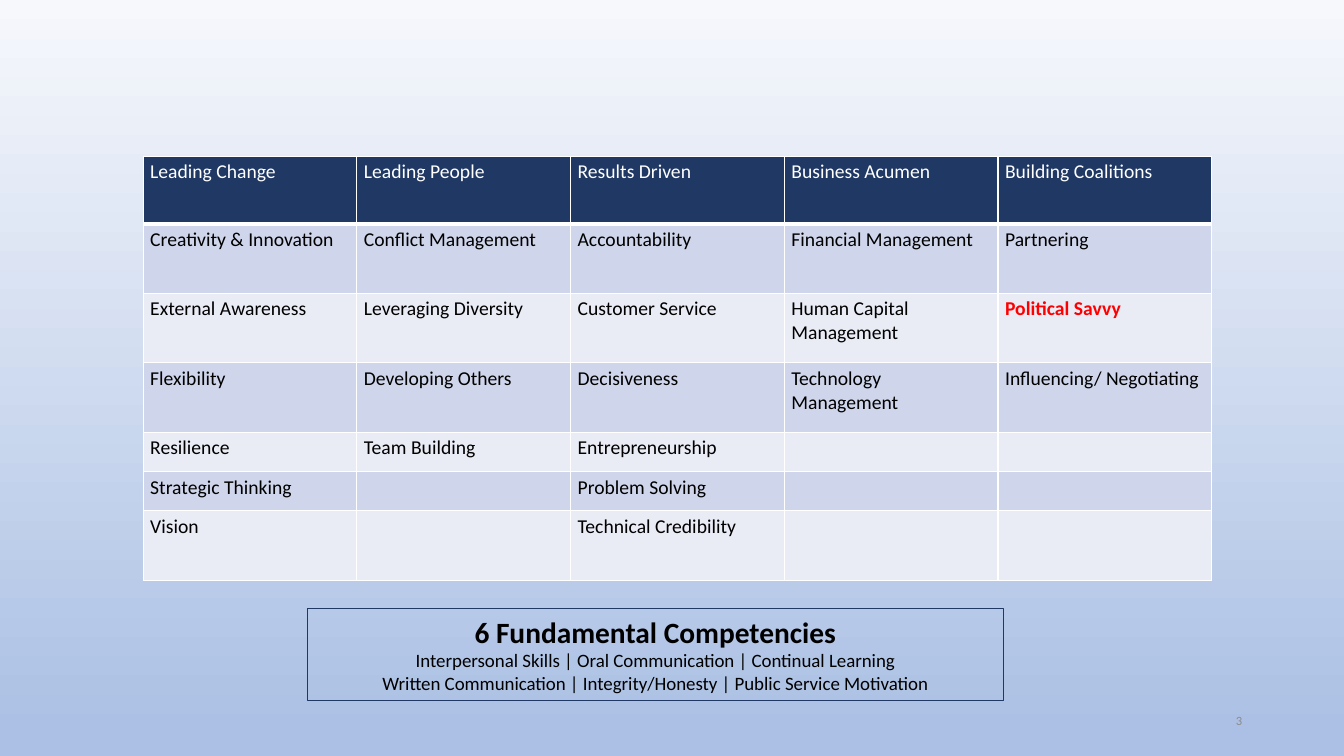
from lxml.etree import SubElement
from pptx import Presentation
from pptx.dml.color import RGBColor
from pptx.enum.shapes import MSO_SHAPE as Shape
from pptx.enum.text import MSO_ANCHOR as Anchor, PP_ALIGN as Align
from pptx.oxml.ns import qn
from pptx.util import Inches, Pt

NAVY = RGBColor(0x20, 0x38, 0x64)
WHITE = RGBColor(0xFF, 0xFF, 0xFF)
BLACK = RGBColor(0, 0, 0)
RED = RGBColor(0xFF, 0, 0)
GRAY = RGBColor(0x8C, 0x8C, 0x8C)
BAND_DARK = RGBColor(0xCF, 0xD5, 0xEA)
BAND_LIGHT = RGBColor(0xE9, 0xEB, 0xF5)
SKY_TOP = RGBColor(0xF6, 0xF8, 0xFC)
SKY_BOTTOM = RGBColor(0xAB, 0xC0, 0xE4)

COMPETENCIES = {
    "Leading Change": ["Creativity & Innovation", "External Awareness", "Flexibility",
                       "Resilience", "Strategic Thinking", "Vision"],
    "Leading People": ["Conflict Management", "Leveraging Diversity",
                       "Developing Others", "Team Building"],
    "Results Driven": ["Accountability", "Customer Service", "Decisiveness",
                       "Entrepreneurship", "Problem Solving", "Technical Credibility"],
    "Business Acumen": ["Financial Management", "Human Capital Management",
                        "Technology Management"],
    "Building Coalitions": ["Partnering", "Political Savvy", "Influencing/ Negotiating"],
}
HIGHLIGHT = "Political Savvy"
ROW_HEIGHTS = [0.67, 0.69, 0.69, 0.69, 0.39, 0.39, 0.69]
COLUMN_WIDTH = 2.12
CELL_MARGINS = {"margin_left": Inches(0.07), "margin_right": Inches(0.07),
                "margin_top": Inches(0.04), "margin_bottom": Inches(0.04)}


def write(paragraph, text, size, color, bold=False, align=Align.LEFT):
    paragraph.alignment = align
    run = paragraph.add_run()
    run.text = text
    run.font.color.rgb = color
    for name, value in {"name": "Calibri", "size": Pt(size), "bold": bold}.items():
        setattr(run.font, name, value)


def paint_background(slide):
    fill = slide.background.fill
    fill.gradient()
    fill.gradient_angle = 270
    for stop, color, position in zip(fill.gradient_stops, (SKY_TOP, SKY_BOTTOM), (0, 0.97)):
        stop.color.rgb = color
        stop.position = position


def add_borders(cell, bottom_width):
    properties = cell._tc.get_or_add_tcPr()
    for side, width in {"L": 1, "R": 1, "T": 1, "B": bottom_width}.items():
        line = SubElement(properties, qn(f"a:ln{side}"), w=str(Pt(width)))
        solid = SubElement(line, qn("a:solidFill"))
        SubElement(solid, qn("a:srgbClr"), val=str(WHITE))


def fill_cell(cell, text, row):
    is_header = row == 0
    add_borders(cell, 3 if is_header else 1)
    cell.fill.solid()
    cell.fill.fore_color.rgb = NAVY if is_header else (BAND_LIGHT, BAND_DARK)[row % 2]
    for name, value in CELL_MARGINS.items():
        setattr(cell, name, value)
    if text:
        marked = text == HIGHLIGHT
        color = WHITE if is_header else RED if marked else BLACK
        write(cell.text_frame.paragraphs[0], text, 14, color, marked)


def add_competency_table(slide):
    rows, columns = len(ROW_HEIGHTS), len(COMPETENCIES)
    table = slide.shapes.add_table(
        rows, columns, Inches(1.42), Inches(1.55),
        Inches(COLUMN_WIDTH * columns), Inches(sum(ROW_HEIGHTS))).table
    for row, height in zip(table.rows, ROW_HEIGHTS):
        row.height = Inches(height)
    for column, (heading, skills) in enumerate(COMPETENCIES.items()):
        table.columns[column].width = Inches(COLUMN_WIDTH)
        texts = [heading, *skills]
        for row in range(rows):
            text = texts[row] if row < len(texts) else ""
            fill_cell(table.cell(row, column), text, row)


def add_fundamentals_box(slide):
    box = slide.shapes.add_shape(
        Shape.RECTANGLE, Inches(3.05), Inches(6.04), Inches(6.9), Inches(0.91))
    box.shadow.inherit = False
    box.fill.background()
    box.line.color.rgb = NAVY
    box.line.width = Pt(0.75)
    frame = box.text_frame
    frame.word_wrap = True
    frame.vertical_anchor = Anchor.TOP
    write(frame.paragraphs[0], "6 Fundamental Competencies", 21, BLACK, True, Align.CENTER)
    for text in ("Interpersonal Skills | Oral Communication | Continual Learning",
                 "Written Communication | Integrity/Honesty | Public Service Motivation"):
        write(frame.add_paragraph(), text, 13.5, BLACK, align=Align.CENTER)


def add_slide_number(slide):
    box = slide.shapes.add_textbox(Inches(9.42), Inches(6.95), Inches(3), Inches(0.4))
    frame = box.text_frame
    frame.word_wrap = True
    frame.vertical_anchor = Anchor.MIDDLE
    write(frame.paragraphs[0], "3", 9, GRAY, align=Align.RIGHT)


def main():
    presentation = Presentation()
    presentation.slide_width = Inches(13.33)
    presentation.slide_height = Inches(7.5)
    slide = presentation.slides.add_slide(presentation.slide_layouts[6])

    # Backdrop
    paint_background(slide)
    # Page number
    add_slide_number(slide)
    # Competencies by qualification
    add_competency_table(slide)
    # Shared competencies
    add_fundamentals_box(slide)

    presentation.save("out.pptx")


if __name__ == "__main__":
    main()
